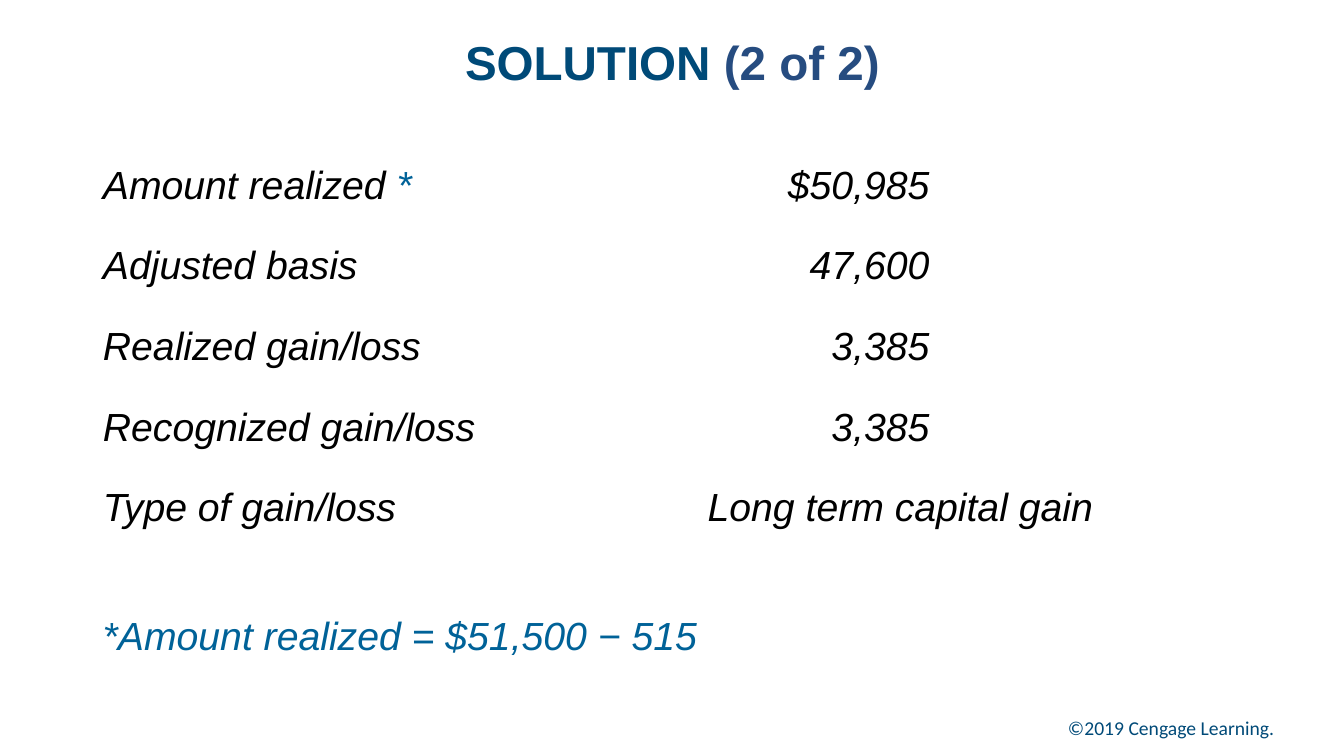
from pptx import Presentation
from pptx import util as u
from pptx.dml.color import RGBColor
from pptx.enum import text

NAVY = RGBColor(0x00, 0x4A, 0x78)
INDIGO = RGBColor(0x26, 0x4C, 0x80)
BLUE = RGBColor(0x00, 0x62, 0x98)
BLACK = RGBColor(0x00, 0x00, 0x00)

LEFT, WIDTH = u.Cm(2.34), u.Cm(29.21)
ROWS = [
    ("Amount realized ", "$50,985"),
    ("Adjusted basis", "47,600"),
    ("Realized gain/loss", "3,385"),
    ("Recognized gain/loss", "3,385"),
    ("Type of gain/loss", "Long term capital gain"),
]


def style(p, size, color, name="Arial", bold=False, italic=False):
    f = p.font
    f.name, f.size, f.bold, f.italic = name, u.Pt(size), bold, italic
    f.color.rgb = color


def add_colored_run(p, words, color):
    r = p.add_run()
    r.text = words
    r.font.color.rgb = color


def add_title(s, left, top, width, height):
    sp = s.shapes.title
    sp.left, sp.top, sp.width, sp.height = left, top, width, height
    tf = sp.text_frame
    tf.vertical_anchor = text.MSO_ANCHOR.MIDDLE
    p = tf.paragraphs[0]
    p.alignment = text.PP_ALIGN.CENTER
    p.line_spacing = 0.9
    p.add_run().text = "SOLUTION"
    add_colored_run(p, " (2 of 2)", INDIGO)
    style(p, 34, NAVY, bold=True)


def add_gain_table(s, left, top, width, height):
    tbl = s.shapes.add_table(len(ROWS), 2, left, top, width, height).table
    tbl.first_row = tbl.horz_banding = False
    tbl.columns[0].width = u.Cm(15.24)
    tbl.columns[1].width = width - u.Cm(15.24)
    for i, row in enumerate(ROWS):
        for j, words in enumerate(row):
            cell = tbl.cell(i, j)
            cell.fill.background()
            cell.vertical_anchor = text.MSO_ANCHOR.MIDDLE
            p = cell.text_frame.paragraphs[0]
            p.add_run().text = words
            style(p, 28, BLACK, italic=True)
            if j == 1 and i < len(ROWS) - 1:
                p.alignment = text.PP_ALIGN.RIGHT
                cell.margin_right = u.Cm(5.08)
    add_colored_run(tbl.cell(0, 0).text_frame.paragraphs[0], "*", BLUE)


def add_note(s, words, left, top, width, height, anchor):
    """Add a one-line text box and return its paragraph."""
    tf = s.shapes.add_textbox(left, top, width, height).text_frame
    tf.word_wrap = True
    tf.vertical_anchor = anchor
    p = tf.paragraphs[0]
    p.add_run().text = words
    return p


def add_footnote(s, left, top, width, height):
    p = add_note(s, "*Amount realized = $51,500 − 515",
                 left, top, width, height, text.MSO_ANCHOR.MIDDLE)
    style(p, 28, BLUE, italic=True)


def add_copyright(s, left, top, width, height):
    p = add_note(s, "©2019 Cengage Learning.",
                 left, top, width, height, text.MSO_ANCHOR.BOTTOM)
    p.alignment = text.PP_ALIGN.RIGHT
    style(p, 14, NAVY, name="Calibri")


def main():
    prs = Presentation()
    prs.slide_width, prs.slide_height = u.Cm(33.87), u.Cm(19.05)
    s = prs.slides.add_slide(prs.slide_layouts[5])
    add_copyright(s, u.Cm(8.03), u.Cm(17.5), u.Cm(24.34), u.Cm(1.27))
    add_title(s, LEFT, u.Cm(0.38), WIDTH, u.Cm(2.54))
    add_gain_table(s, LEFT, u.Cm(3.66), u.Cm(26.16), u.Cm(10.16))
    add_footnote(s, LEFT, u.Cm(15.17), WIDTH, u.Cm(1.65))
    prs.save("out.pptx")


if __name__ == "__main__":
    main()
